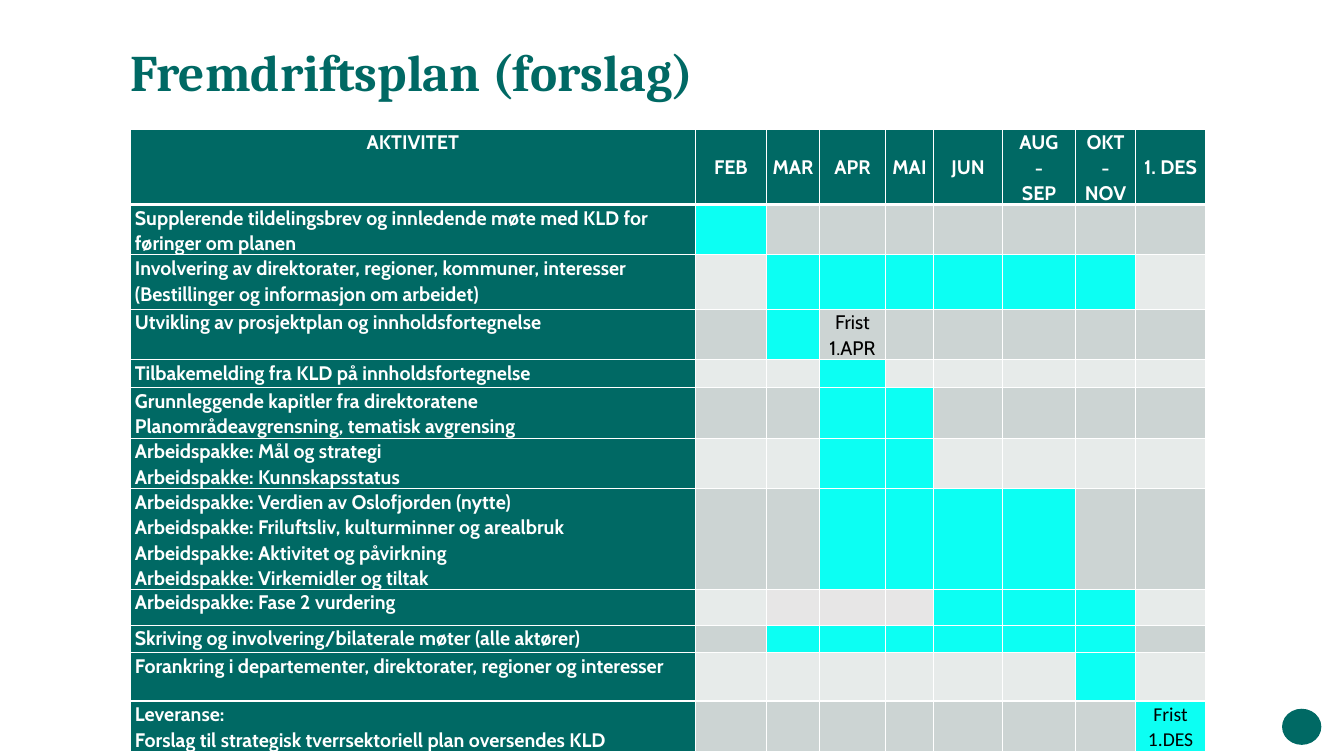
from dataclasses import dataclass

from lxml import etree
from pptx import Presentation
from pptx.dml.color import RGBColor
from pptx.enum.shapes import MSO_SHAPE
from pptx.enum.text import MSO_ANCHOR, PP_ALIGN
from pptx.oxml.ns import qn
from pptx.util import Cm, Pt

OVAL = MSO_SHAPE.OVAL
TOP, MIDDLE = MSO_ANCHOR.TOP, MSO_ANCHOR.MIDDLE
LEFT, CENTER = PP_ALIGN.LEFT, PP_ALIGN.CENTER


@dataclass(frozen=True)
class Theme:
    teal: str = "006964"
    cyan: str = "0CFFF3"
    dark: str = "CCD4D3"
    light: str = "E7EBEA"
    gray: str = "E7E6E6"
    white: str = "FFFFFF"
    black: str = "000000"
    serif: str = "Cambria"
    sans: str = "Cabin"
    plain: str = "Calibri"
    title: float = 36.6
    body: float = 14
    thin: float = 1
    thick: float = 3


THEME = Theme()

HEADS = ["AKTIVITET", "FEB", "MAR", "APR", "MAI", "JUN", "AUG\n-\nSEP", "OKT - NOV", "1. DES"]
WIDTHS = [14.25, 1.78, 1.35, 1.65, 1.22, 1.73, 1.85, 1.5, 1.78]
HEAD_HEIGHT = 1.45

TASKS = [
    ("Supplerende tildelingsbrev og innledende møte med KLD for føringer om planen", 0.97, 1, 1),
    ("Involvering av direktorater, regioner, kommuner, interesser\n"
     "(Bestillinger og informasjon om arbeidet)", 1.37, 2, 7),
    ("Utvikling av prosjektplan og innholdsfortegnelse", 0.64, 2, 2),
    ("Tilbakemelding fra KLD på innholdsfortegnelse", 0.71, 3, 3),
    ("Grunnleggende kapitler fra direktoratene\n"
     "Planområdeavgrensning, tematisk avgrensing", 0.99, 3, 4),
    ("Arbeidspakke: Mål og strategi\nArbeidspakke: Kunnskapsstatus", 0.97, 3, 4),
    ("Arbeidspakke: Verdien av Oslofjorden (nytte)\n"
     "Arbeidspakke: Friluftsliv, kulturminner og arealbruk\n"
     "Arbeidspakke: Aktivitet og påvirkning\n"
     "Arbeidspakke: Virkemidler og tiltak", 1.93, 3, 6),
    ("Arbeidspakke: Fase 2 vurdering", 0.91, 5, 7),
    ("Skriving og involvering/bilaterale møter (alle aktører)", 0.69, 2, 7),
    ("Forankring i departementer, direktorater, regioner og interesser", 1.22, 7, 7),
    ("Leveranse:\nForslag til strategisk tverrsektoriell plan oversendes KLD", 1.22, 8, 8),
]
DATES = {(3, 3): ("Frist\n1.APR", THEME.sans), (11, 8): ("Frist\n1.DES", THEME.plain)}
GRAYS = {(8, 2), (8, 3), (8, 4)}


def paint(item, color):
    item.fill.solid()
    item.fill.fore_color.rgb = RGBColor.from_string(color)


def style(frame, face, size, color, bold, align=LEFT, space=None):
    for para in frame.paragraphs:
        para.alignment = align
        para.line_spacing = space
        for run in para.runs:
            font = run.font
            font.name, font.size, font.bold = face, Pt(size), bold
            font.color.rgb = RGBColor.from_string(color)


def frame_cell(cell, base):
    props = cell._tc.get_or_add_tcPr()
    for side in "LRTB":
        width = base if side == "B" else THEME.thin
        line = etree.SubElement(props, qn("a:ln" + side), w=str(Pt(width)))
        fill = etree.SubElement(line, qn("a:solidFill"))
        etree.SubElement(fill, qn("a:srgbClr"), val=THEME.white)


def fill_cell(cell, text, color, face=THEME.sans, ink=THEME.white, bold=True,
              align=LEFT, anchor=TOP, base=THEME.thin):
    cell.margin_left = cell.margin_right = Cm(0.12)
    cell.margin_top = cell.margin_bottom = 0
    cell.vertical_anchor = anchor
    frame_cell(cell, base)
    paint(cell, color)
    frame = cell.text_frame
    frame.text = text
    style(frame, face, THEME.body, ink, bold, align, 1.07)
    if not text:
        etree.SubElement(frame.paragraphs[0]._p, qn("a:endParaRPr"), sz=str(int(THEME.body * 100)))


def month_color(row, col, first, last):
    if first <= col <= last:
        return THEME.cyan
    if (row, col) in GRAYS:
        return THEME.gray
    return THEME.dark if row % 2 else THEME.light


def add_title(slide, text):
    frame = slide.shapes.add_textbox(Cm(3.28), Cm(1.02), Cm(25.8), Cm(3.12)).text_frame
    frame.word_wrap = True
    frame.margin_left = frame.margin_right = frame.margin_top = frame.margin_bottom = 0
    frame.text = text
    style(frame, THEME.serif, THEME.title, THEME.teal, True)


def add_plan(slide):
    heights = [HEAD_HEIGHT] + [task[1] for task in TASKS]
    table = slide.shapes.add_table(len(heights), len(WIDTHS), Cm(3.28), Cm(3.25),
                                   Cm(sum(WIDTHS)), Cm(sum(heights))).table
    for col, width in zip(table.columns, WIDTHS):
        col.width = Cm(width)
    for row, height in zip(table.rows, heights):
        row.height = Cm(height)
    for col, head in enumerate(HEADS):
        fill_cell(table.cell(0, col), head, THEME.teal, align=CENTER,
                  anchor=MIDDLE if col else TOP, base=THEME.thick)
    for row, (name, _, first, last) in enumerate(TASKS, 1):
        fill_cell(table.cell(row, 0), name, THEME.teal)
        for col in range(1, len(HEADS)):
            text, face = DATES.get((row, col), ("", THEME.sans))
            fill_cell(table.cell(row, col), text, month_color(row, col, first, last),
                      face, THEME.black, False, CENTER)


def add_dot(slide):
    dot = slide.shapes.add_shape(OVAL, Cm(32.31), Cm(17.86), Cm(0.99), Cm(0.91))
    dot.shadow.inherit = False
    paint(dot, THEME.teal)
    dot.line.fill.background()


def main():
    deck = Presentation()
    deck.slide_width, deck.slide_height = Cm(33.87), Cm(19.05)
    slide = deck.slides.add_slide(deck.slide_layouts[6])
    add_title(slide, "Fremdriftsplan (forslag)")
    add_plan(slide)
    add_dot(slide)
    deck.save("out.pptx")


if __name__ == "__main__":
    main()
